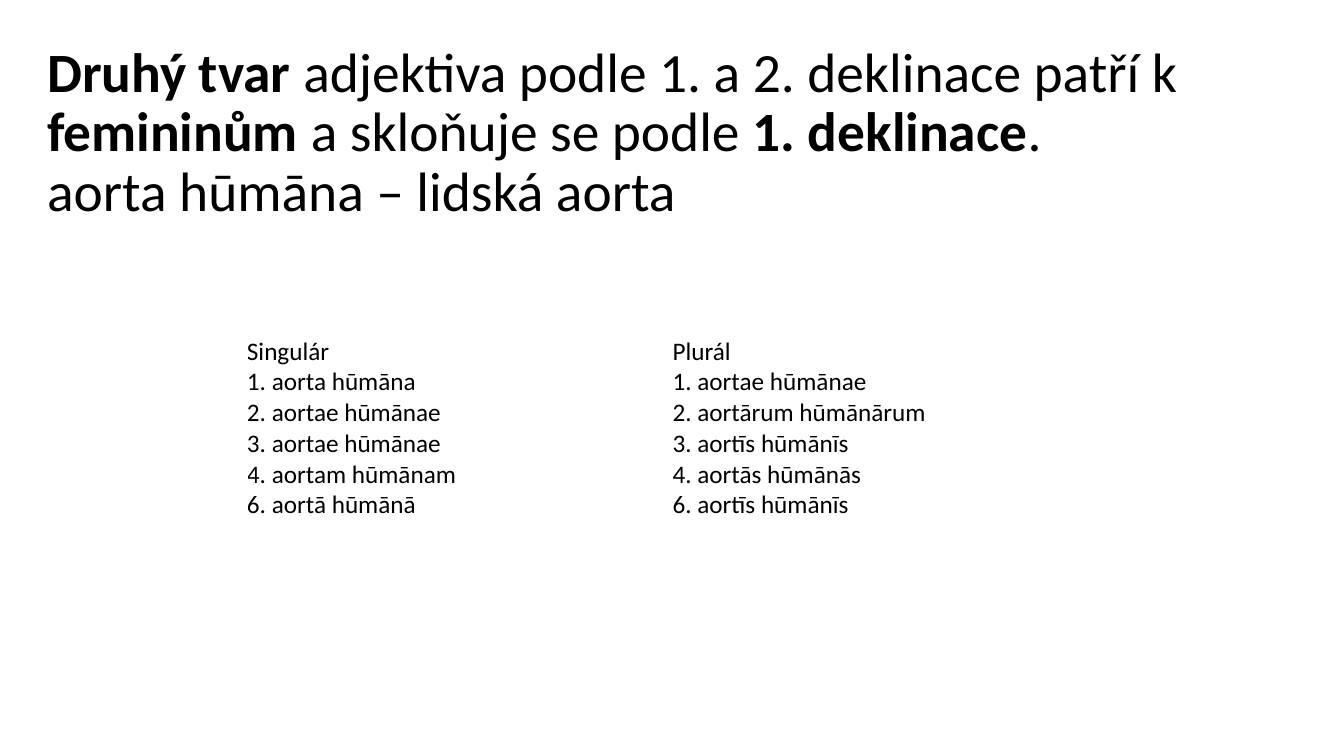
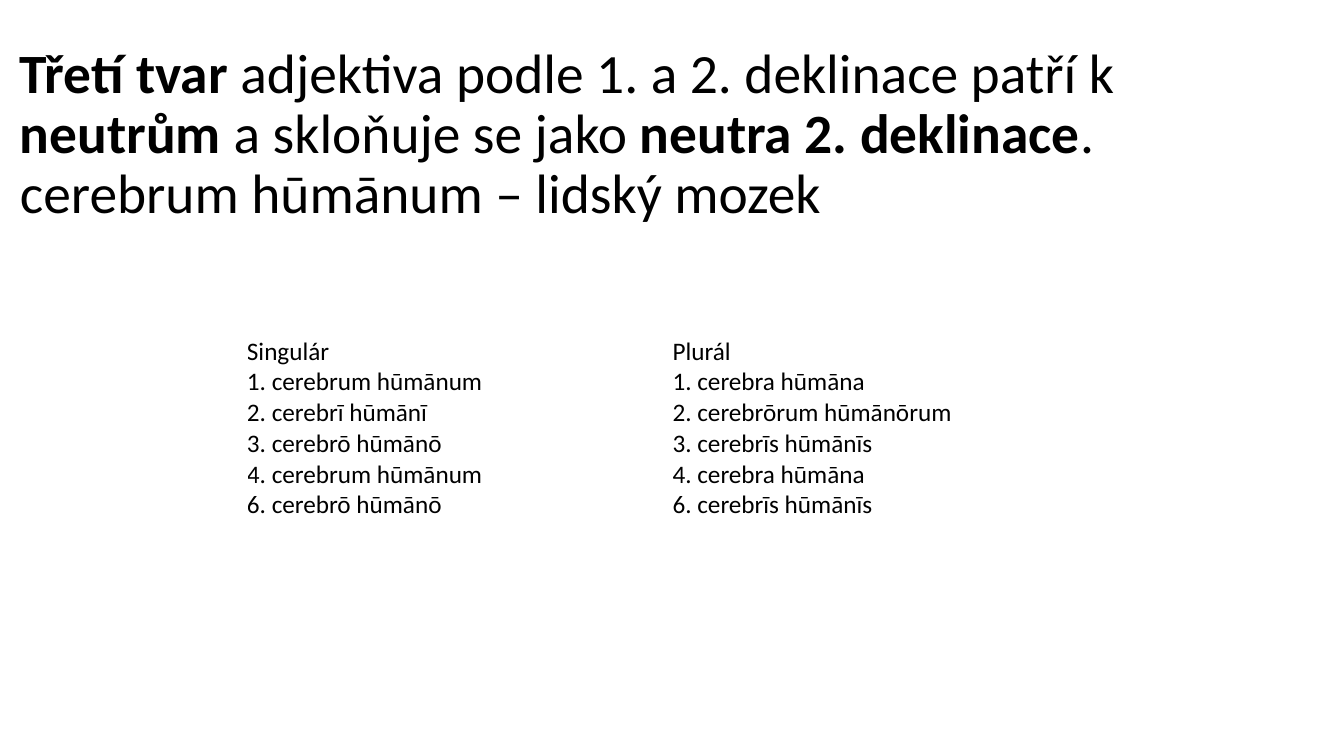
import pptx
import pptx.dml.color
import pptx.enum.text
import pptx.util

Pt = pptx.util.Pt
INK = pptx.dml.color.RGBColor(0, 0, 0)
FONT = "Calibri"
TITLE_SIZE = 39.6
FORM_SIZE = 18
TABLE_BOX = (176.4, 240, 608, 151.2)
HEADER_HEIGHT = 22
HEADERS = ("Singulár", "Plurál")
CASES = (1, 2, 3, 4, 6)

LESSONS = [
    {
        "title_box": (26.6, 28, 920, 138),
        "rule": [
            ("Druhý tvar ", True),
            ("adjektiva podle 1. a 2. deklinace patří k ", False),
            ("femininům ", True),
            ("a skloňuje se podle ", False),
            ("1. deklinace", True),
            (".", False),
        ],
        "example": "aorta hūmāna – lidská aorta",
        "singular": ["aorta hūmāna", "aortae hūmānae", "aortae hūmānae",
                     "aortam hūmānam", "aortā hūmānā"],
        "plural": ["aortae hūmānae", "aortārum hūmānārum", "aortīs hūmānīs",
                   "aortās hūmānās", "aortīs hūmānīs"],
    },
    {
        "title_box": (7.2, 29, 920, 138),
        "rule": [
            ("Třetí tvar ", True),
            ("adjektiva podle 1. a 2. deklinace patří k ", False),
            ("neutrům ", True),
            ("a skloňuje se jako ", False),
            ("neutra 2. deklinace", True),
            (".", False),
        ],
        "example": "cerebrum hūmānum – lidský mozek",
        "singular": ["cerebrum hūmānum", "cerebrī hūmānī", "cerebrō hūmānō",
                     "cerebrum hūmānum", "cerebrō hūmānō"],
        "plural": ["cerebra hūmāna", "cerebrōrum hūmānōrum", "cerebrīs hūmānīs",
                   "cerebra hūmāna", "cerebrīs hūmānīs"],
    },
]


def add_run(paragraph, text, size, bold=False):
    """Append one styled run to a paragraph."""
    run = paragraph.add_run()
    run.text = text
    run.font.name = FONT
    run.font.size = Pt(size)
    run.font.bold = bold
    run.font.color.rgb = INK


def add_title(slide, box, rule, example):
    """Place the grammar rule and its example in the given box."""
    frame = slide.shapes.add_textbox(*map(Pt, box)).text_frame
    frame.word_wrap = True
    frame.vertical_anchor = pptx.enum.text.MSO_ANCHOR.TOP
    sentence = frame.paragraphs[0]
    sentence.line_spacing = 0.9
    for text, bold in rule:
        add_run(sentence, text, TITLE_SIZE, bold)
    sentence.add_line_break()
    add_run(sentence, example, TITLE_SIZE)


def fill_cell(cell, lines):
    """Write lines as paragraphs into a plain cell without margins."""
    cell.fill.background()
    cell.margin_left = cell.margin_right = cell.margin_top = cell.margin_bottom = 0
    frame = cell.text_frame
    for index, line in enumerate(lines):
        paragraph = frame.add_paragraph() if index else frame.paragraphs[0]
        add_run(paragraph, line, FORM_SIZE)


def add_declension(slide, box, singular, plural):
    """Place the table of singular and plural forms in the given box."""
    declension = slide.shapes.add_table(2, len(HEADERS), *map(Pt, box)).table
    declension.first_row = False
    declension.horz_banding = False
    declension.rows[0].height = Pt(HEADER_HEIGHT)
    declension.rows[1].height = Pt(box[3] - HEADER_HEIGHT)
    for column, (header, forms) in enumerate(zip(HEADERS, (singular, plural))):
        fill_cell(declension.cell(0, column), [header])
        numbered = [f"{case}. {form}" for case, form in zip(CASES, forms)]
        fill_cell(declension.cell(1, column), numbered)


def add_lesson(deck, lesson):
    """Add one slide with a grammar rule and its declension."""
    slide = deck.slides.add_slide(deck.slide_layouts[6])
    add_title(slide, lesson["title_box"], lesson["rule"], lesson["example"])
    add_declension(slide, TABLE_BOX, lesson["singular"], lesson["plural"])


def main():
    """Build and save the presentation."""
    deck = pptx.Presentation()
    deck.slide_width, deck.slide_height = Pt(960), Pt(540)
    for lesson in LESSONS:
        add_lesson(deck, lesson)
    deck.save("out.pptx")


if __name__ == "__main__":
    main()
